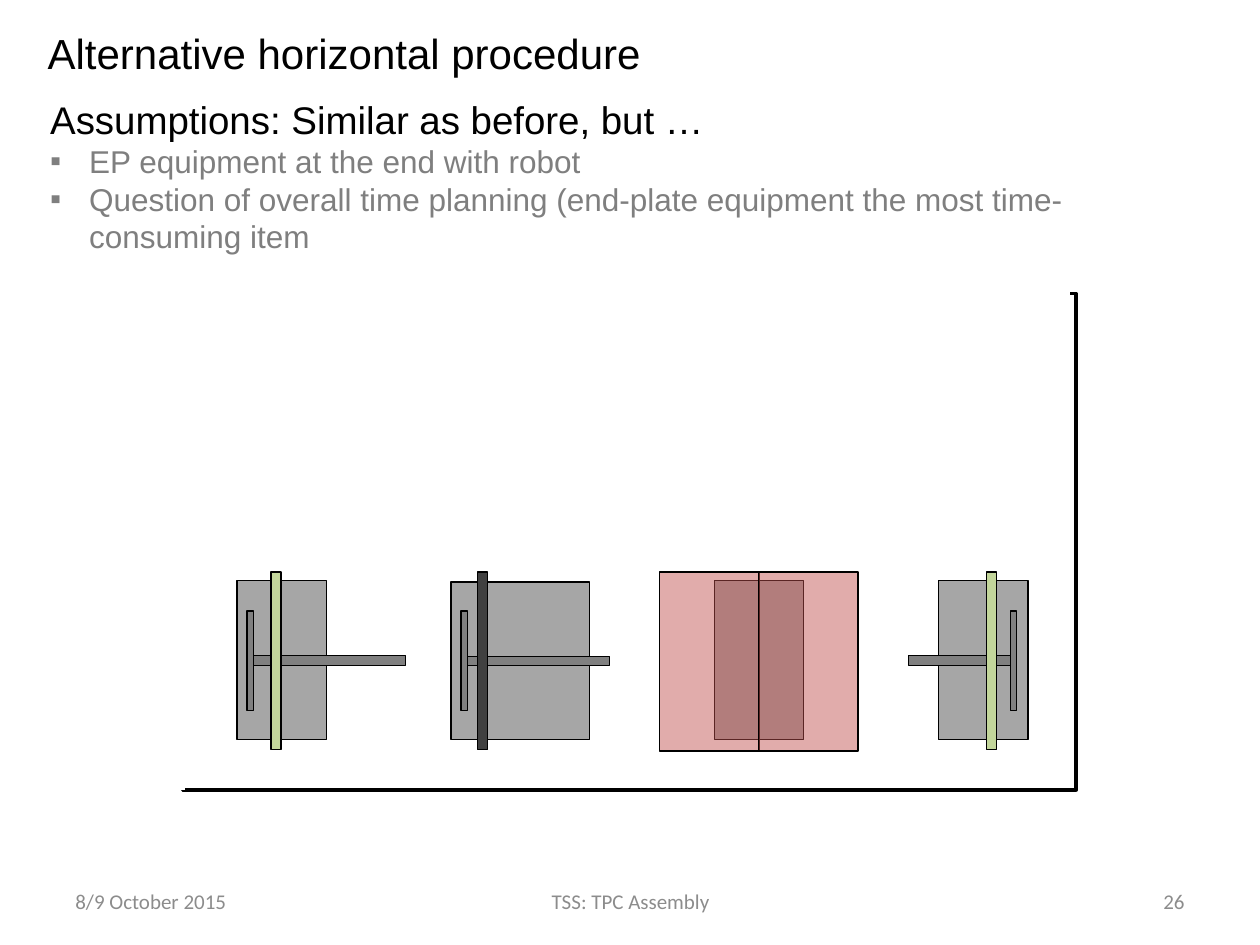
"""Build the slide on the alternative horizontal assembly procedure."""
from collections import namedtuple
from lxml import etree
from pptx import Presentation
from pptx.dml.color import RGBColor
from pptx.enum import shapes, text
from pptx.oxml.ns import qn
from pptx.util import Inches, Pt

Theme = namedtuple("Theme", "black white grey muted block steel green dark red "
                            "title head item foot sans footer_font")
theme = Theme("000000", "FFFFFF", "7F7F7F", "8C8C8C", "A6A6A6", "808080",
              "C3D69B", "404040", "C0504D", 24, 22, 18, 12, "Arial", "Calibri")

prs = Presentation()
prs.slide_width, prs.slide_height = Inches(10), Inches(7.5)
s = prs.slides.add_slide(prs.slide_layouts[6])
col, row = prs.slide_width / 100, prs.slide_height / 75


def rect(x, y, w, h, fill=None, weight=0.75):
    sp = s.shapes.add_shape(shapes.MSO_SHAPE.RECTANGLE, int(x * col), int(y * row),
                            int(w * col), int(h * row))
    sp.shadow.inherit = False
    if fill:
        sp.fill.solid()
        sp.fill.fore_color.rgb = RGBColor.from_string(fill)
    else:
        sp.fill.background()
    sp.line.color.rgb = RGBColor.from_string(theme.black)
    sp.line.width = Pt(weight)
    return sp


def write(x, y, w, h, lines, font, align=text.PP_ALIGN.LEFT,
          anchor=text.MSO_ANCHOR.TOP, wrap=True):
    tf = s.shapes.add_textbox(int(x * col), int(y * row),
                              int(w * col), int(h * row)).text_frame
    tf.word_wrap, tf.vertical_anchor = wrap, anchor
    for i, (words, size, color, bullet) in enumerate(lines):
        p = tf.paragraphs[0] if i == 0 else tf.add_paragraph()
        p.alignment = align
        if bullet:
            pPr = p._p.get_or_add_pPr()
            pPr.set("marL", str(int(3.1 * col)))
            pPr.set("indent", str(int(-3.1 * col)))
            etree.SubElement(pPr, qn("a:buFont"), typeface=theme.sans)
            etree.SubElement(pPr, qn("a:buChar"), char=bullet)
        r = p.add_run()
        r.text = words
        r.font.name, r.font.size = font, Pt(size)
        r.font.color.rgb = RGBColor.from_string(color)


rect(56.7, 46.1, 7.1, 12.6, theme.block)

write(2.8, 1.7, 49.7, 5,
      [("Alternative horizontal procedure", theme.title, theme.black, None)],
      theme.sans, wrap=False)
write(3, 7.1, 90.3, 16.7, [
    ("Assumptions: Similar as before, but …", theme.head, theme.black, None),
    ("EP equipment at the end with robot", theme.item, theme.grey, "▪"),
    ("Question of overall time planning (end-plate equipment the most "
     "time-consuming item", theme.item, theme.grey, "▪"),
], theme.sans)

for block_x, plate_x, arm_x, arm_w in [(74.5, 80.2, 72.1, 8.1), (18.8, 19.6, 20.1, 12.1)]:
    rect(block_x, 46.1, 7.1, 12.6, theme.block)
    rect(plate_x, 48.5, 0.5, 7.9, theme.steel)
    rect(arm_x, 52, arm_w, 0.8, theme.steel)

rect(14.5, 23.3, 70.9, 39.4, weight=2)
for x1, y1, x2, y2 in [(11.7, 23.3, 84.9, 23.3), (14.5, 21, 14.5, 62.7)]:
    mask = s.shapes.add_connector(shapes.MSO_CONNECTOR.STRAIGHT, int(x1 * col),
                                  int(y1 * row), int(x2 * col), int(y2 * row))
    mask.line.color.rgb = RGBColor.from_string(theme.white)
    mask.line.width = Pt(3)
    etree.SubElement(mask._element.spPr, qn("a:effectLst"))

for x, w, words, align in [(5, 23.3, "8/9 October 2015", text.PP_ALIGN.LEFT),
                           (34.2, 31.7, "TSS: TPC Assembly", text.PP_ALIGN.CENTER),
                           (71.7, 23.3, "26", text.PP_ALIGN.RIGHT)]:
    write(x, 69.5, w, 4, [(words, theme.foot, theme.muted, None)],
          theme.footer_font, align, text.MSO_ANCHOR.MIDDLE)

for x in (21.5, 78.3):
    rect(x, 45.4, 0.8, 14.1, theme.green)

for x in (52.35, 60.2):
    panel = rect(x, 45.4, 7.9, 14.2, theme.red)
    color = panel._element.spPr.find(qn("a:solidFill"))[0]
    etree.SubElement(color, qn("a:alpha"), val="47000")

rect(35.8, 46.2, 11, 12.5, theme.block)
rect(36.6, 48.5, 0.5, 7.9, theme.steel)
rect(37.1, 52.1, 11.3, 0.7, theme.steel)
rect(37.9, 45.4, 0.8, 14.1, theme.dark)

prs.save("out.pptx")
